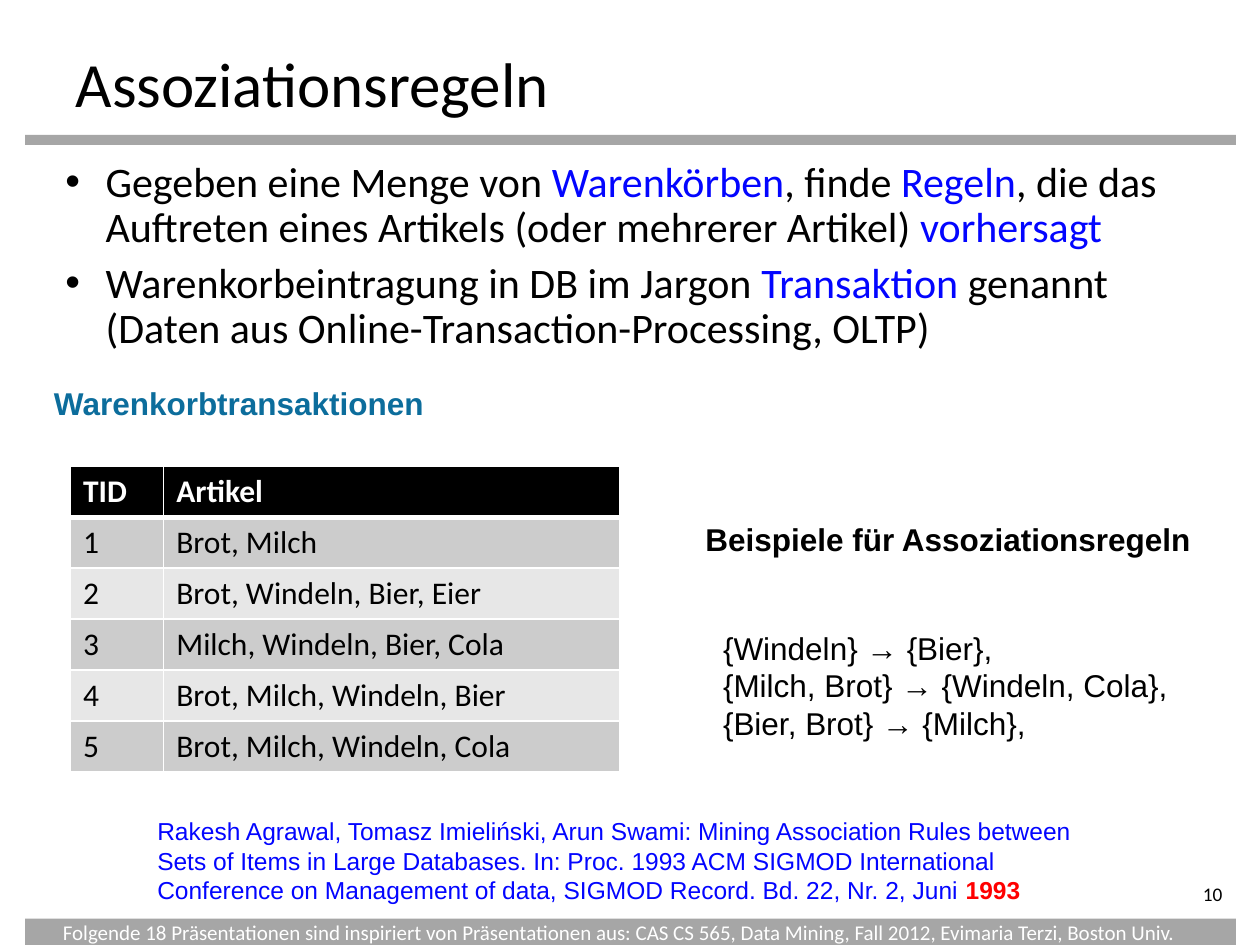
from dataclasses import dataclass
from typing import Optional

from pptx import Presentation
from pptx.dml.color import RGBColor
from pptx.enum.shapes import MSO_SHAPE as Shape
from pptx.enum.text import MSO_ANCHOR as Anchor, MSO_AUTO_SIZE as Fit, PP_ALIGN as Align
from pptx.oxml.ns import qn
from pptx.util import Inches, Pt
from lxml.etree import SubElement

BLACK, WHITE, BLUE, RED = "000000", "FFFFFF", "0305FF", "FF0000"
GRAY, TEAL, DARK, LIGHT = "A6A6A6", "0C6D9C", "CCCCCC", "E7E7E7"


@dataclass
class Run:
    text: str
    color: str = BLACK
    bold: bool = False


@dataclass
class Note:
    box: tuple
    runs: list
    size: int
    font: str = "Arial"
    align: Optional[Align] = None
    pad: tuple = (0.1, 0.05, 0.1, 0.05)


def paint(target, color: str) -> None:
    target.solid()
    target.fore_color.rgb = RGBColor.from_string(color)


def place(shape, box: tuple) -> None:
    shape.left, shape.top, shape.width, shape.height = map(Inches, box)


def write(para, runs: list, size: int, font: str) -> None:
    for item in runs:
        for row, text in enumerate(item.text.split("\n")):
            if row:
                para.add_line_break()
            run = para.add_run()
            run.text = text
            run.font.size = Pt(size)
            run.font.name = font
            run.font.bold = item.bold
            run.font.color.rgb = RGBColor.from_string(item.color)


def add_bar(slide, box: tuple) -> None:
    bar = slide.shapes.add_shape(Shape.RECTANGLE, *map(Inches, box))
    bar.shadow.inherit = False
    paint(bar.fill, GRAY)
    bar.line.fill.background()


def add_box(slide, box: tuple, pad: tuple):
    frame = slide.shapes.add_textbox(*map(Inches, box)).text_frame
    frame.word_wrap = True
    (frame.margin_left, frame.margin_top,
     frame.margin_right, frame.margin_bottom) = map(Inches, pad)
    return frame


def add_note(slide, note: Note) -> None:
    para = add_box(slide, note.box, note.pad).paragraphs[0]
    if note.align is not None:
        para.alignment = note.align
    write(para, note.runs, note.size, note.font)


def add_list(slide, box: tuple, items: list) -> None:
    frame = add_box(slide, box, (0.1, 0.05, 0.1, 0.05))
    for row, runs in enumerate(items):
        para = frame.add_paragraph() if row else frame.paragraphs[0]
        para.line_spacing = 0.9
        para.space_before = Pt(6)
        props = para._p.get_or_add_pPr()
        props.set("marL", str(Inches(0.32)))
        props.set("indent", str(-Inches(0.32)))
        SubElement(props, qn("a:buFont"), typeface="Arial")
        SubElement(props, qn("a:buChar"), char="•")
        write(para, runs, 24, "Calibri")


def add_edges(cell, base: int) -> None:
    props = cell._tc.get_or_add_tcPr()
    for side, width in (("L", 1), ("R", 1), ("T", 1), ("B", base)):
        line = SubElement(props, qn(f"a:ln{side}"), w=str(Pt(width)))
        fill = SubElement(line, qn("a:solidFill"))
        SubElement(fill, qn("a:srgbClr"), val=WHITE)


def add_grid(slide, box: tuple, cols: tuple, rows: list) -> None:
    grid = slide.shapes.add_table(len(rows), len(cols), *map(Inches, box)).table
    for col, width in zip(grid.columns, cols):
        col.width = Inches(width)
    for y, row in enumerate(rows):
        head = y == 0
        shade = BLACK if head else DARK if y % 2 else LIGHT
        for x, text in enumerate(row):
            cell = grid.cell(y, x)
            add_edges(cell, 3 if head else 1)
            paint(cell.fill, shade)
            run = Run(text, WHITE if head else BLACK, head)
            write(cell.text_frame.paragraphs[0], [run], 18, "Calibri")


POINTS = [
    [Run("Gegeben eine Menge von "), Run("Warenkörben", BLUE), Run(", finde "),
     Run("Regeln", BLUE),
     Run(", die das Auftreten eines Artikels (oder mehrerer Artikel) "),
     Run("vorhersagt", BLUE)],
    [Run("Warenkorbeintragung in DB im Jargon "), Run("Transaktion ", BLUE),
     Run("genannt\n(Daten aus Online-Transaction-Processing, OLTP)")],
]

BASKETS = [
    "Brot, Milch",
    "Brot, Windeln, Bier, Eier",
    "Milch, Windeln, Bier, Cola",
    "Brot, Milch, Windeln, Bier",
    "Brot, Milch, Windeln, Cola",
]

NOTES = [
    Note((8.7, 7, 1.1, 0.22), [Run("10")], 11, "Calibri", Align.RIGHT, (0, 0, 0.1, 0)),
    Note((0.33, 3, 4.58, 0.4), [Run("Warenkorbtransaktionen", TEAL, True)], 18),
    Note((5.5, 4.08, 4.17, 0.4), [Run("Beispiele für Assoziationsregeln", BLACK, True)], 18),
    Note((5.64, 4.94, 3.86, 1.01),
         [Run("{Windeln} → {Bier},\n{Milch, Brot} → {Windeln, Cola},\n"
              "{Bier, Brot} → {Milch},")], 18),
    Note((1.15, 6.43, 7.64, 0.81),
         [Run("Rakesh Agrawal, Tomasz Imieliński, Arun Swami: Mining Association Rules "
              "between Sets of Items in Large Databases. In: Proc. 1993 ACM SIGMOD "
              "International Conference on Management of data, SIGMOD Record. "
              "Bd. 22, Nr. 2, Juni ", BLUE), Run("1993", RED, True)], 14),
    Note((0.4, 7.25, 9.32, 0.3),
         [Run("Folgende 18 Präsentationen sind inspiriert von Präsentationen aus: "
              "CAS CS 565, Data Mining, Fall 2012, Evimaria Terzi, Boston Univ.", WHITE)],
         12, "Calibri"),
]


def main() -> None:
    deck = Presentation()
    deck.slide_width, deck.slide_height = Inches(10), Inches(7.5)
    slide = deck.slides.add_slide(deck.slide_layouts[5])

    title = slide.shapes.title
    place(title, (0.5, 0.29, 9, 0.72))
    frame = title.text_frame
    frame.auto_size = Fit.NONE
    frame.vertical_anchor = Anchor.MIDDLE
    frame.paragraphs[0].alignment = Align.LEFT
    write(frame.paragraphs[0], [Run("Assoziationsregeln")], 36, "Calibri")

    for top, height in ((1.07, 0.08), (7.29, 0.21)):
        add_bar(slide, (0.2, top, 9.61, height))
    add_list(slide, (0.42, 1.23, 9.1, 1.54), POINTS)
    for note in NOTES:
        add_note(slide, note)
    rows = [("TID", "Artikel")]
    rows += [(str(num), text) for num, text in enumerate(BASKETS, 1)]
    add_grid(slide, (0.56, 3.7, 4.36, 2.43), (0.74, 3.62), rows)
    deck.save("out.pptx")


if __name__ == "__main__":
    main()
